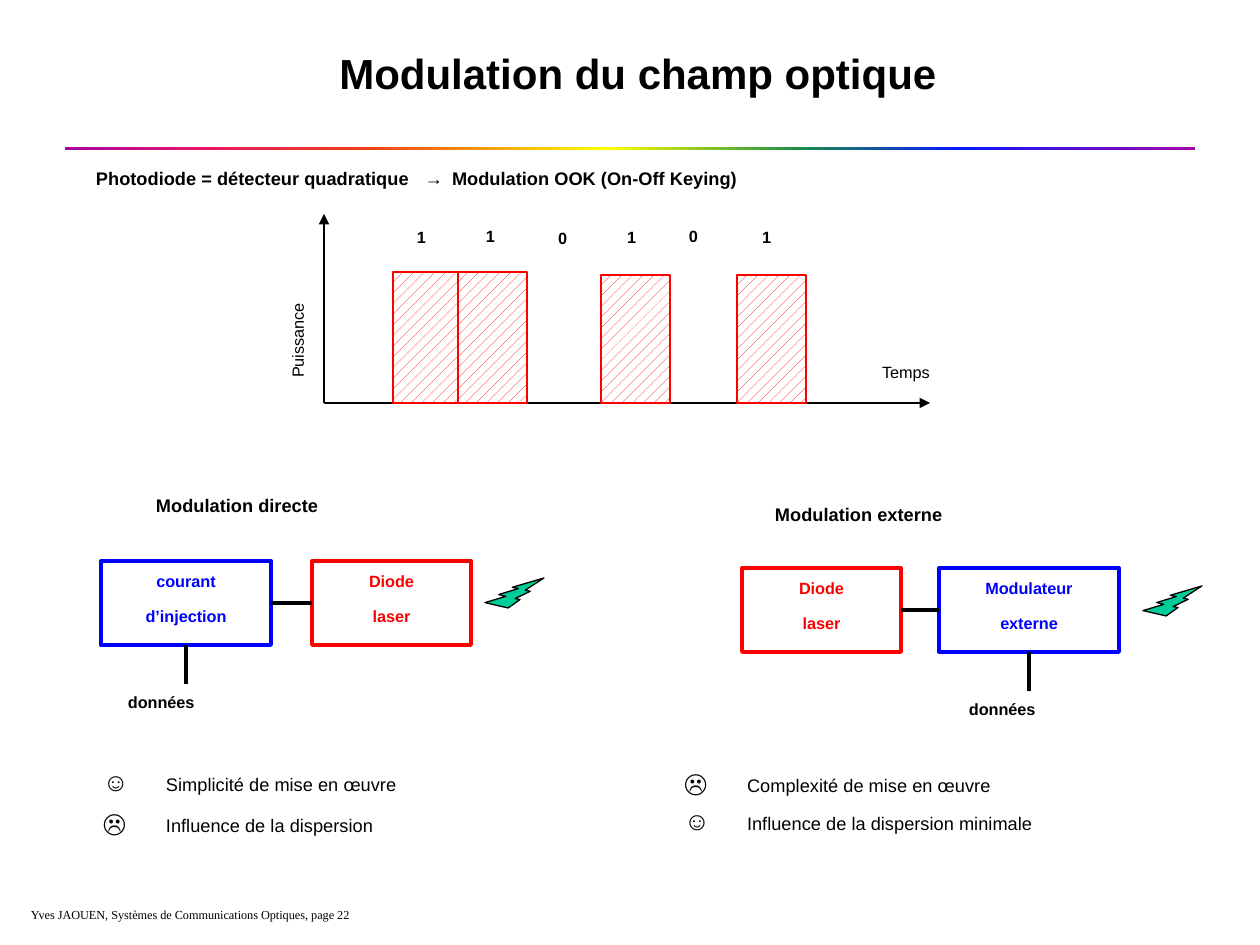
from dataclasses import dataclass

from lxml.etree import SubElement
from pptx import Presentation
from pptx.dml.color import RGBColor
from pptx.enum.dml import MSO_PATTERN
from pptx.enum.shapes import MSO_CONNECTOR, MSO_SHAPE
from pptx.enum.text import MSO_ANCHOR, MSO_AUTO_SIZE, PP_ALIGN
from pptx.oxml.ns import qn
from pptx.util import Emu, Pt


@dataclass(frozen=True)
class Theme:
    black: str = "000000"
    white: str = "FFFFFF"
    red: str = "FF0000"
    blue: str = "0000FF"
    green: str = "00CC99"
    rainbow: tuple = ((0, "A603AB"), (12, "E81766"), (27, "EE3F17"), (48, "FFFF00"),
                      (65, "1A8D48"), (79, "0819FB"), (100, "A603AB"))
    sans: str = "Arial"
    serif: str = "Times New Roman"
    title: float = 24
    body: float = 10.4
    label: float = 9.3
    footer: float = 7
    face: float = 14.5
    thin: float = 0.75
    thick: float = 2.25


THEME = Theme()


def px(length):
    return Emu(round(length * 914400 / 126))


def rgb(value):
    return RGBColor.from_string(value)


def add_run(paragraph, text, size=THEME.body, color=THEME.black, bold=False, font=THEME.sans):
    run = paragraph.add_run()
    run.text = text
    run.font.size, run.font.bold, run.font.name = Pt(size), bold, font
    run.font.color.rgb = rgb(color)


def write(frame, lines, align=PP_ALIGN.LEFT, anchor=MSO_ANCHOR.TOP, wrap=False,
          top=0, gap=0, **style):
    """Fill a frame with lines of text; gap is the space between them in points."""
    frame.auto_size, frame.word_wrap = MSO_AUTO_SIZE.NONE, wrap
    frame.vertical_anchor = anchor
    frame.margin_left = frame.margin_right = frame.margin_bottom = 0
    frame.margin_top = px(top)
    for index, line in enumerate(lines):
        paragraph = frame.add_paragraph() if index else frame.paragraphs[0]
        paragraph.alignment = align
        paragraph.space_before = Pt(gap if index else 0)
        add_run(paragraph, line, **style)
    return frame.paragraphs[0]


def add_tabs(paragraph, *stops):
    tabs = SubElement(paragraph._p.get_or_add_pPr(), qn("a:tabLst"))
    for stop in stops:
        SubElement(tabs, qn("a:tab"), pos=str(px(stop)), algn="l")


def place(shape, left, top, width, height):
    shape.left, shape.top, shape.width, shape.height = map(px, (left, top, width, height))


class SlideBuilder:
    def __init__(self, slide, theme):
        self.slide, self.theme = slide, theme

    def title(self, text, *box):
        holder = self.slide.shapes.title
        place(holder, *box)
        write(holder.text_frame, [text], size=self.theme.title, bold=True,
              align=PP_ALIGN.CENTER, anchor=MSO_ANCHOR.MIDDLE)

    def text(self, text, left, top, width=200, height=20, rotation=0, **style):
        box = self.slide.shapes.add_textbox(*map(px, (left, top, width, height)))
        box.rotation = rotation
        return write(box.text_frame, [text], **style)

    def shape(self, kind, left, top, width, height, fill=None, line=None, weight=THEME.thin):
        shape = self.slide.shapes.add_shape(kind, *map(px, (left, top, width, height)))
        shape.shadow.inherit = False
        if fill:
            shape.fill.solid()
            shape.fill.fore_color.rgb = rgb(fill)
        else:
            shape.fill.background()
        if line:
            shape.line.color.rgb, shape.line.width = rgb(line), Pt(weight)
        else:
            shape.line.fill.background()
        return shape

    def rainbow_rule(self, *box):
        rule = self.shape(MSO_SHAPE.RECTANGLE, *box)
        rule.fill.gradient()
        rule.fill.gradient_angle = 0
        stops = rule._element.spPr.find(qn("a:gradFill")).find(qn("a:gsLst"))
        stops.clear()
        for percent, color in self.theme.rainbow:
            stop = SubElement(stops, qn("a:gs"), pos=str(percent * 1000))
            SubElement(stop, qn("a:srgbClr"), val=color)

    def pulse(self, left, top, bottom):
        bar = self.shape(MSO_SHAPE.RECTANGLE, left, top, 69, bottom - top, line=self.theme.red)
        bar.fill.patterned()
        bar.fill.pattern = MSO_PATTERN.PERCENT_20
        bar.fill.fore_color.rgb = rgb(self.theme.red)
        bar.fill.back_color.rgb = rgb(self.theme.white)

    def block(self, lines, left, top, width, color, fill=None):
        block = self.shape(MSO_SHAPE.RECTANGLE, left, top, width, 84, fill, color,
                           self.theme.thick)
        write(block.text_frame, lines, align=PP_ALIGN.CENTER, top=10, gap=8.7,
              size=self.theme.label, color=color, bold=True)
        return block

    def bolt(self, left, top):
        bolt = self.shape(MSO_SHAPE.LIGHTNING_BOLT, left, top, 59, 30,
                          self.theme.green, self.theme.black)
        bolt._element.spPr.find(qn("a:xfrm")).set("flipV", "1")

    def line(self, start, end, weight, arrow=False):
        line = self.slide.shapes.add_connector(MSO_CONNECTOR.STRAIGHT, *map(px, (*start, *end)))
        line.line.color.rgb, line.line.width = rgb(self.theme.black), Pt(weight)
        properties = line._element.spPr
        if arrow:
            SubElement(properties.find(qn("a:ln")), qn("a:tailEnd"), type="triangle")
        SubElement(properties, qn("a:effectLst"))
        return line

    def verdicts(self, index, items, left, top, pitch):
        """List of faces with remarks; each item is face, remark and tab stop."""
        holder = self.slide.placeholders[index]
        place(holder, left, top, 480, 100)
        frame = holder.text_frame
        write(frame, [face for face, _, _ in items], size=self.theme.face,
              font=self.theme.serif)
        for paragraph, (_, remark, stop) in zip(frame.paragraphs, items):
            paragraph.line_spacing = Pt(pitch)
            properties = paragraph._p.get_or_add_pPr()
            properties.set("marL", "0")
            properties.set("indent", "0")
            SubElement(properties, qn("a:buNone"))
            add_tabs(paragraph, stop)
            add_run(paragraph, "\t" + remark)


def main():
    deck = Presentation()
    deck.slide_width, deck.slide_height = px(1260), px(945)
    theme = THEME
    page = SlideBuilder(deck.slides.add_slide(deck.slide_layouts[3]), theme)

    # Heading, rule and footer
    page.title("Modulation du champ optique", 286, 43, 704, 60)
    page.rainbow_rule(65, 147, 1130, 3)
    page.text("Yves JAOUEN, Systèmes de Communications Optiques, page 22", 31, 907, 640,
              size=theme.footer, font=theme.serif)
    principle = page.text("Photodiode = détecteur quadratique\t→\tModulation OOK (On-Off Keying)",
                          96, 167, 1000, bold=True)
    add_tabs(principle, 329, 356)

    # Power over time
    origin = (324, 403)
    page.line(origin, (324, 214), theme.thin, arrow=True)
    page.line(origin, (930, 403), theme.thin, arrow=True)
    for left, top in ((393, 272), (458, 272), (601, 275), (737, 275)):
        page.pulse(left, top, origin[1])
    for bit, left, top in zip("110101", (417, 486, 558, 627, 689, 762),
                              (227, 226, 228, 227, 226, 227)):
        page.text(bit, left, top, 20, size=theme.label, bold=True)
    page.text("Puissance", 257, 331, 80, 19, rotation=270, size=theme.label,
              align=PP_ALIGN.CENTER)
    page.text("Temps", 882, 362, 80, size=theme.label)

    # Direct and external modulation
    laser = dict(lines=["Diode", "laser"], width=159, color=theme.red, fill=theme.white)
    page.text("Modulation directe", 156, 494, bold=True)
    current = page.block(["courant", "d’injection"], 101, 561, 170, theme.blue)
    direct_laser = page.block(left=312, top=561, **laser)
    page.bolt(485, 578)

    page.text("Modulation externe", 775, 503, bold=True)
    modulator = page.block(["Modulateur", "externe"], 939, 568, 180, theme.blue)
    external_laser = page.block(left=742, top=568, **laser)
    page.bolt(1143, 586)

    for source, target in ((current, direct_laser), (external_laser, modulator)):
        link = page.line((0, 0), (0, 0), theme.thick)
        link.begin_connect(source, 3)
        link.end_connect(target, 1)
    for driven, center, end, left in ((current, 186, 684, 128), (modulator, 1029, 691, 969)):
        feed = page.line((center, end - 39), (center, end), theme.thick)
        feed.begin_connect(driven, 2)
        page.text("données", left, end + 8, size=theme.label, bold=True)

    # Advantages and drawbacks
    page.verdicts(1, [("☺", "Simplicité de mise en œuvre", 25),
                      ("☹", "Influence de la dispersion", 33)], 103, 755, 23.5)
    page.verdicts(2, [("☹", "Complexité de mise en œuvre", 33),
                      ("☺", "Influence de la dispersion minimale", 26)], 684, 760, 21.7)

    deck.save("out.pptx")


if __name__ == "__main__":
    main()
